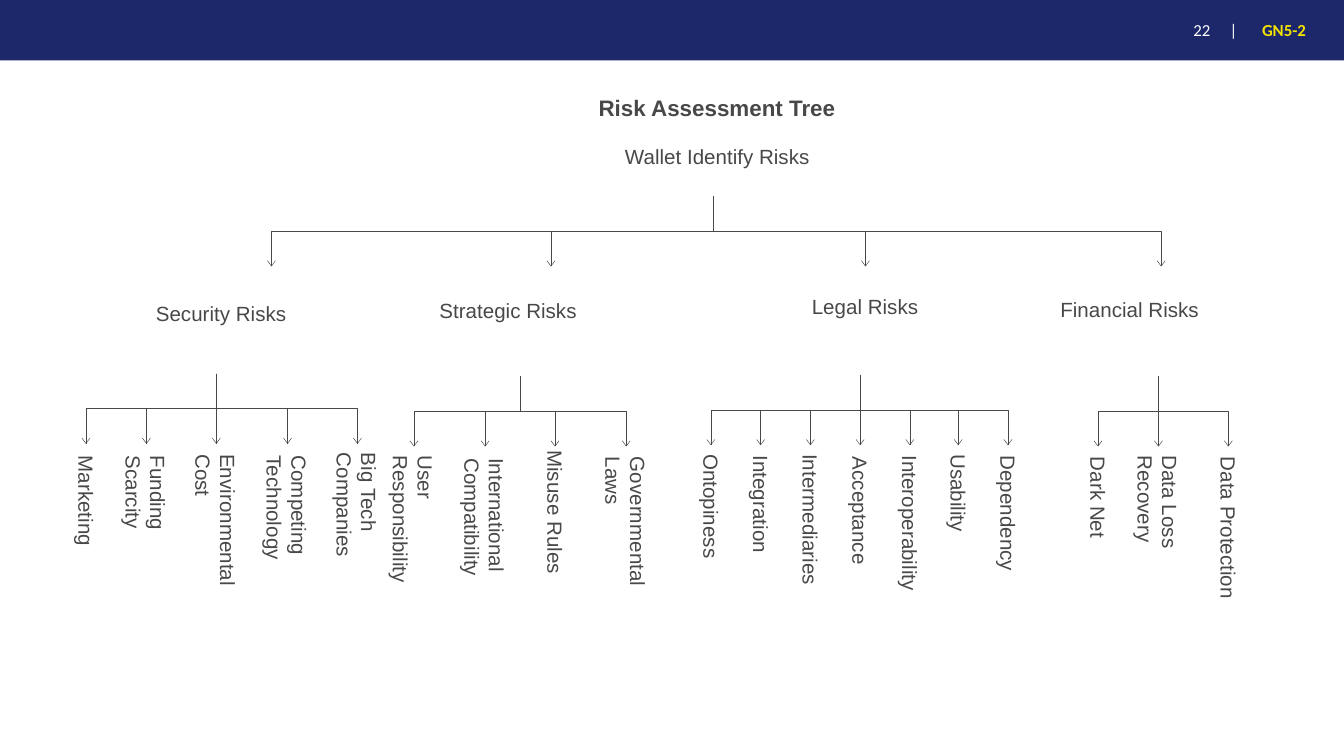
"""Build the risk assessment tree slide."""
from dataclasses import dataclass

from lxml.etree import SubElement
from pptx import Presentation
from pptx.dml.color import RGBColor
from pptx.enum.shapes import MSO_CONNECTOR, MSO_SHAPE
from pptx.enum.text import MSO_ANCHOR, MSO_AUTO_SIZE, PP_ALIGN
from pptx.oxml.ns import qn
from pptx.util import Inches, Pt

HUES = {"navy": "1D286B", "white": "FFFFFF", "gold": "F4E200", "ink": "484848"}
WIDTH = 10
DROP = 0.26


@dataclass
class Label:
    """A text with its place in inches."""
    text: str
    left: float
    top: float
    width: float


@dataclass
class Leaf:
    """A turned text below an arrow."""
    text: str
    x: float
    top: float
    length: float


@dataclass
class Branch:
    """A risk group with its leaves."""
    label: Label
    stem: float
    top: float
    leaves: list[Leaf]


ROOT = Label("Wallet Identify Risks", 4.65, 1.07, 1.49)
FORKS = [2.02, 4.1, 6.44, 8.64]
TREE = [
    Branch(Label("Security Risks", 1.16, 2.24, 1.23), 1.61, 2.78, [
        Leaf("Marketing", 0.64, 3.39, 0.96),
        Leaf("Funding\vScarcity", 1.09, 3.39, 0.79),
        Leaf("Environmental\vCost", 1.61, 3.38, 1.39),
        Leaf("Competing\vTechnology", 2.14, 3.39, 1.13),
        Leaf("Big Tech\vCompanies", 2.66, 3.37, 1.1),
    ]),
    Branch(Label("Strategic Risks", 3.27, 2.22, 1.23), 3.87, 2.8, [
        Leaf("User\vResponsibility", 3.08, 3.39, 1.35),
        Leaf("International\vCompatibility", 3.61, 3.41, 1.25),
        Leaf("Misuse Rules", 4.13, 3.35, 1.31),
        Leaf("Governmental\vLaws", 4.66, 3.4, 1.37),
    ]),
    Branch(Label("Legal Risks", 6.04, 2.19, 0.98), 6.4, 2.79, [
        Leaf("Ontopiness", 5.29, 3.38, 1.1),
        Leaf("Integration", 5.66, 3.39, 1.03),
        Leaf("Intermediaries", 6.03, 3.38, 1.38),
        Leaf("Acceptance", 6.4, 3.4, 1.14),
        Leaf("Interoperability", 6.77, 3.39, 1.43),
        Leaf("Usability", 7.13, 3.38, 0.83),
        Leaf("Dependency", 7.5, 3.39, 1.23),
    ]),
    Branch(Label("Financial Risks", 7.89, 2.21, 1.57), 8.62, 2.8, [
        Leaf("Dark Net", 8.17, 3.4, 0.86),
        Leaf("Data Loss\vRecovery", 8.62, 3.39, 0.98),
        Leaf("Data Protection", 9.14, 3.4, 1.5),
    ]),
]


def tint(name: str) -> RGBColor:
    """Return a named colour."""
    return RGBColor.from_string(HUES[name])


def place(shape, left: float, top: float, width: float, height: float) -> None:
    """Move and size a shape, in inches."""
    shape.left, shape.top = Inches(left), Inches(top)
    shape.width, shape.height = Inches(width), Inches(height)


def style(shape, text: str, size: float, hue: str, face: str = "Arial",
          bold: bool = False, inset: float = 0) -> None:
    """Fill a shape with text in one font."""
    frame = shape.text_frame
    frame.text = text
    frame.word_wrap = True
    frame.auto_size = MSO_AUTO_SIZE.NONE
    frame.margin_left = frame.margin_right = Inches(inset)
    frame.margin_top = frame.margin_bottom = 0
    font = frame.paragraphs[0].font
    font.name, font.size, font.bold = face, Pt(size), bold
    font.color.rgb = tint(hue)


def add_text(shapes, label: Label, height: float = 0.2):
    """Add a tree label."""
    box = shapes.add_textbox(0, 0, 0, 0)
    place(box, label.left, label.top, label.width, height)
    style(box, label.text, 11, "ink")
    return box


def add_leaf(shapes, leaf: Leaf) -> None:
    """Add a label turned to read downwards below its arrow."""
    double = "\v" in leaf.text
    height = 0.46 if double else 0.23
    mid = leaf.x - (0.05 if double else 0.02)
    left = mid - leaf.length / 2
    top = leaf.top + leaf.length / 2 - height / 2
    box = add_text(shapes, Label(leaf.text, left, top, leaf.length), height)
    box.rotation = 90


def add_path(shapes, points: list[tuple[float, float]]) -> None:
    """Draw a thin open path."""
    first, *rest = [(Inches(x), Inches(y)) for x, y in points]
    pen = shapes.build_freeform(*first)
    pen.add_line_segments(rest, close=False)
    path = pen.convert_to_shape()
    path.shadow.inherit = False
    path.fill.background()
    path.line.color.rgb = tint("ink")
    path.line.width = Pt(0.25)


def add_line(shapes, x: float, top: float, end: float) -> None:
    """Draw a thin upright line."""
    line = shapes.add_connector(MSO_CONNECTOR.STRAIGHT, Inches(x), Inches(top),
                                Inches(x), Inches(end))
    line.line.color.rgb = tint("ink")
    line.line.width = Pt(0.25)
    SubElement(line._element.spPr, qn("a:effectLst"))


def add_fork(shapes, stem: float, top: float, ends: list[float]) -> None:
    """Draw a stem that splits into one arrow per end."""
    bar, tip = top + DROP, top + 2 * DROP
    for x in ends:
        if x == stem:
            add_line(shapes, x, top, tip)
        else:
            add_path(shapes, [(stem, top), (stem, bar), (x, bar), (x, tip)])
        add_path(shapes, [(x - 0.03, tip - 0.04), (x, tip), (x + 0.03, tip - 0.04)])


def add_head(shapes) -> None:
    """Add the top band with page number and project code."""
    band = shapes.add_shape(MSO_SHAPE.RECTANGLE, 0, 0, 0, 0)
    place(band, 0, -0.03, WIDTH, 0.48)
    band.shadow.inherit = False
    band.fill.solid()
    band.fill.fore_color.rgb = tint("navy")
    band.line.fill.background()
    page = shapes.add_textbox(0, 0, 0, 0)
    place(page, 8.81, 0.09, 0.47, 0.27)
    style(page, "22\t|", 9, "white", "Calibri", inset=0.07)
    props = page.text_frame.paragraphs[0]._p.get_or_add_pPr()
    tabs = props.makeelement(qn("a:tabLst"), {})
    SubElement(tabs, qn("a:tab"), pos=str(Inches(0.27)), algn="l")
    props.insert(0, tabs)
    code = shapes.add_textbox(0, 0, 0, 0)
    place(code, 9.32, 0.1, 0.65, 0.24)
    style(code, "GN5-2", 9, "gold", "Calibri", True, 0.07)
    for box in (page, code):
        box.text_frame.vertical_anchor = MSO_ANCHOR.MIDDLE


def main() -> None:
    """Build and save the slide."""
    deck = Presentation()
    deck.slide_width, deck.slide_height = Inches(WIDTH), Inches(WIDTH * 9 / 16)
    shapes = deck.slides.add_slide(deck.slide_layouts[5]).shapes
    add_head(shapes)
    title = shapes.title
    place(title, 4.44, 0.7, 1.79, 0.2)
    style(title, "Risk Assessment Tree", 12, "ink", bold=True)
    title.text_frame.word_wrap = False
    title.text_frame.vertical_anchor = MSO_ANCHOR.TOP
    title.text_frame.paragraphs[0].alignment = PP_ALIGN.CENTER
    add_text(shapes, ROOT)
    add_fork(shapes, 5.31, 1.46, FORKS)
    for branch in TREE:
        add_text(shapes, branch.label)
        add_fork(shapes, branch.stem, branch.top, [leaf.x for leaf in branch.leaves])
        for leaf in branch.leaves:
            add_leaf(shapes, leaf)
    deck.save("out.pptx")


if __name__ == "__main__":
    main()
